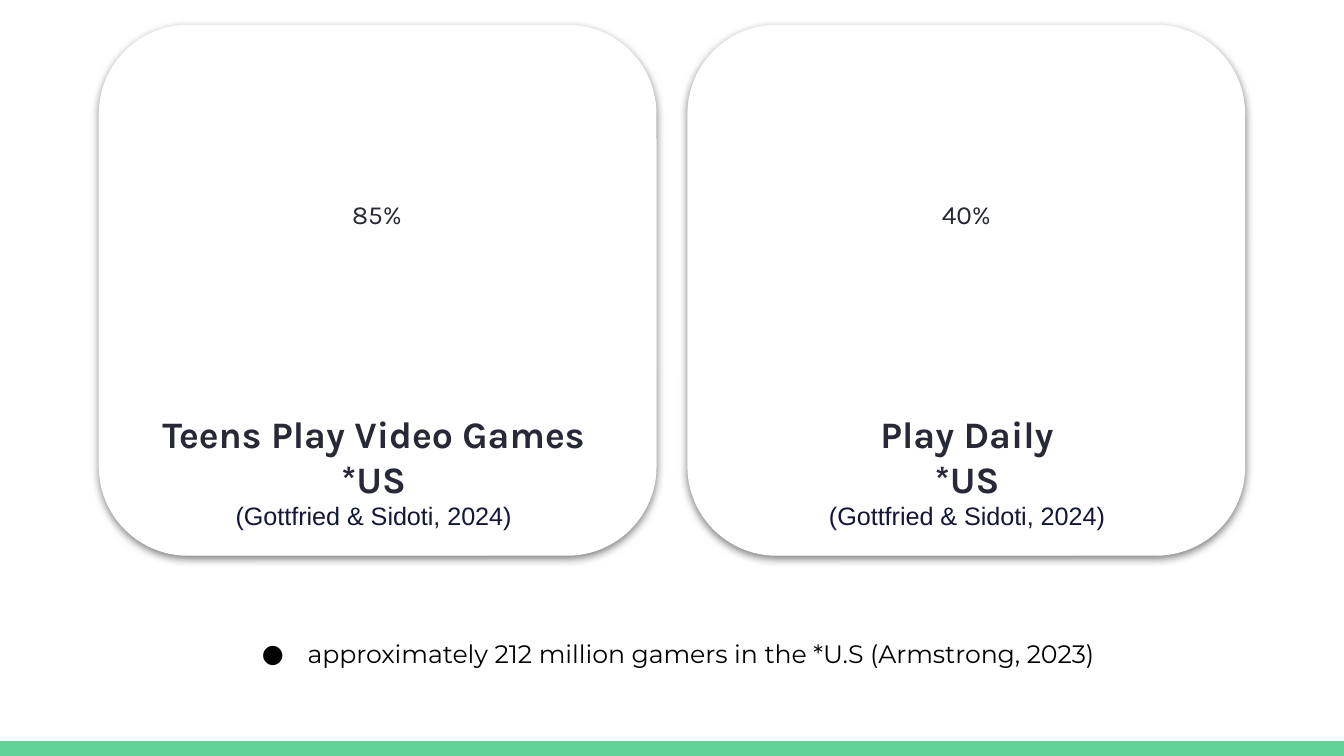
from lxml import etree
from pptx import Presentation
from pptx.dml.color import RGBColor
from pptx.enum.shapes import MSO_SHAPE
from pptx.enum.text import MSO_ANCHOR, PP_ALIGN
from pptx.oxml import parse_xml
from pptx.oxml.ns import nsdecls, qn
from pptx.util import Inches, Pt

RECT, ROUNDED = MSO_SHAPE.RECTANGLE, MSO_SHAPE.ROUNDED_RECTANGLE
CENTER, LEFT, TOP = PP_ALIGN.CENTER, PP_ALIGN.LEFT, MSO_ANCHOR.TOP

COLORS = {
    "card": "FFFFFF",
    "bar": "63D297",
    "heading": "272A36",
    "citation": "121737",
    "body": "000000",
}
SLIDE_W, SLIDE_H = 10, 10 * 9 / 16
CARD_W, CARD_H, CARD_GAP, CARD_TOP = 4.14, 3.94, 0.24, 0.19
CITATION = "(Gottfried & Sidoti, 2024)"
# percentage, headline, then left offset and width of the figure and the caption
CARDS = [
    ("85%", "Teens Play Video Games", (0.68, 2.77), (0.3, 3.48)),
    ("40%", "Play Daily", (0.61, 2.92), (0.08, 3.99)),
]


def rgb(name):
    return RGBColor.from_string(COLORS[name])


def add_panel(slide, kind, left, top, width, height, color):
    panel = slide.shapes.add_shape(
        kind, Inches(left), Inches(top), Inches(width), Inches(height))
    panel.shadow.inherit = False
    panel.fill.solid()
    panel.fill.fore_color.rgb = rgb(color)
    return panel


def add_text(slide, left, top, width, height, lines, align=CENTER, inset=0.1):
    """Add a text box; each line is (text, size, font, color, bold)."""
    box = slide.shapes.add_textbox(
        Inches(left), Inches(top), Inches(width), Inches(height))
    frame = box.text_frame
    frame.word_wrap = True
    frame.vertical_anchor = TOP
    frame.margin_left = frame.margin_right = Inches(0.1)
    frame.margin_top = frame.margin_bottom = Inches(inset)
    for i, (text, size, font, color, bold) in enumerate(lines):
        paragraph = frame.add_paragraph() if i else frame.paragraphs[0]
        paragraph.text = text
        paragraph.alignment = align
        paragraph.font.size = Pt(size)
        paragraph.font.name = font
        paragraph.font.bold = bold
        paragraph.font.color.rgb = rgb(color)
    return frame.paragraphs


def add_soft_shadow(panel):
    effects = panel._element.spPr.find(qn("a:effectLst"))
    effects.append(parse_xml(
        f'<a:outerShdw {nsdecls("a")} blurRad="{Pt(4.5)}" dist="{Pt(1.5)}" '
        'dir="5400000" algn="bl" rotWithShape="0"><a:srgbClr val="000000">'
        '<a:alpha val="50000"/></a:srgbClr></a:outerShdw>'))


def outline_text(run, color):
    run.font._element.insert(0, parse_xml(
        f'<a:ln {nsdecls("a")} w="{Pt(0.75)}"><a:solidFill>'
        f'<a:srgbClr val="{COLORS[color]}"/></a:solidFill></a:ln>'))


def add_bullet(paragraph, symbol, size, font, color):
    props = paragraph._p.get_or_add_pPr()
    props.set("marL", str(Inches(0.5)))
    props.set("indent", str(Inches(-0.34)))
    bullet_color = etree.Element(qn("a:buClr"))
    etree.SubElement(bullet_color, qn("a:srgbClr"), val=COLORS[color])
    defaults = props.find(qn("a:defRPr"))
    for part in (bullet_color,
                 etree.Element(qn("a:buSzPts"), val=str(int(size * 100))),
                 etree.Element(qn("a:buFont"), typeface=font),
                 etree.Element(qn("a:buChar"), char=symbol)):
        defaults.addprevious(part)


def add_stat_card(slide, left, top, percentage, headline, figure_span, caption_span):
    card = add_panel(slide, ROUNDED, left, top, CARD_W, CARD_H, "card")
    card.adjustments[0] = 0.167
    card.line.color.rgb = rgb("card")
    card.line.width = Pt(0.75)
    add_soft_shadow(card)

    offset, width = figure_span
    figure = add_text(slide, left + offset, top + 1.24, width, 1.15,
                      [(percentage, 14, "Karla", "heading", False)], inset=0.05)
    outline_text(figure[0].runs[0], "heading")

    offset, width = caption_span
    add_text(slide, left + offset, top + 2.77, width, 1.1, [
        (headline, 20, "Karla", "heading", True),
        ("*US", 20, "Karla", "heading", True),
        (CITATION, 13.5, "Arial", "citation", False),
    ])


def add_gamer_note(slide, left, top, width, height):
    size, font, color = 13.5, "Montserrat", "body"
    note = add_text(
        slide, left, top, width, height,
        [("approximately 212 million gamers in the *U.S (Armstrong, 2023)",
          size, font, color, False)], align=LEFT)[0]
    note.line_spacing = 1.5
    add_bullet(note, "●", size, font, color)


def add_footer_bar(slide, height):
    bar = add_panel(slide, RECT, 0, SLIDE_H - height, SLIDE_W, height, "bar")
    bar.line.fill.background()


def main():
    prs = Presentation()
    prs.slide_width, prs.slide_height = Inches(SLIDE_W), Inches(SLIDE_H)
    slide = prs.slides.add_slide(prs.slide_layouts[6])

    add_footer_bar(slide, 0.11)
    first_left = (SLIDE_W - 2 * CARD_W - CARD_GAP) / 2
    for i, card in enumerate(CARDS):
        add_stat_card(slide, first_left + i * (CARD_W + CARD_GAP), CARD_TOP, *card)
    add_gamer_note(slide, 1.69, 4.54, 6.62, 0.43)

    prs.save("out.pptx")


if __name__ == "__main__":
    main()
